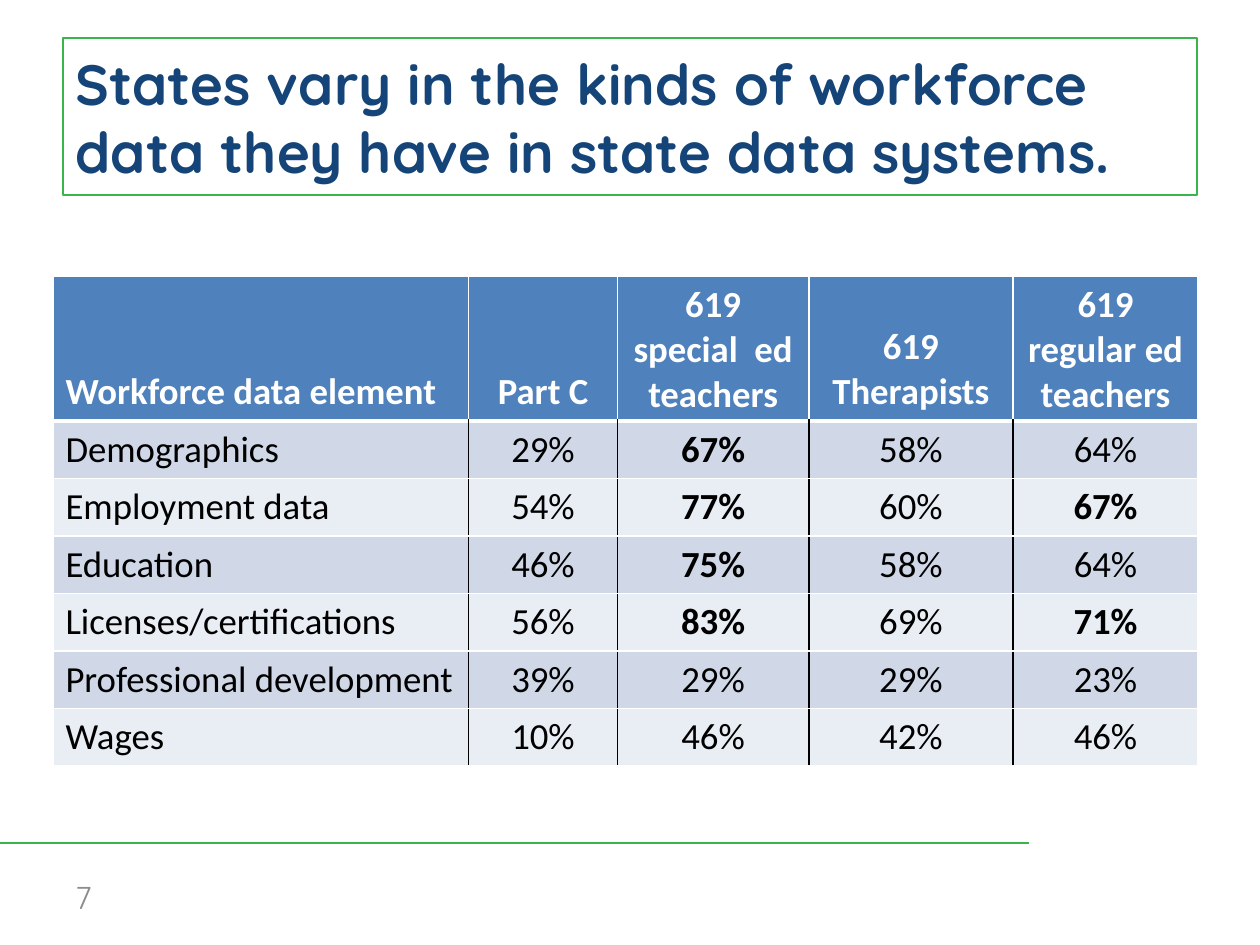
from dataclasses import dataclass

from lxml import etree
from pptx import Presentation
from pptx.dml.color import RGBColor
from pptx.enum.shapes import MSO_CONNECTOR
from pptx.enum.text import MSO_ANCHOR, MSO_AUTO_SIZE, PP_ALIGN
from pptx.oxml.ns import qn
from pptx.util import Inches, Pt

STRAIGHT = MSO_CONNECTOR.STRAIGHT
TOP, MIDDLE, BOTTOM = MSO_ANCHOR.TOP, MSO_ANCHOR.MIDDLE, MSO_ANCHOR.BOTTOM
LEFT, CENTER = PP_ALIGN.LEFT, PP_ALIGN.CENTER
NO_AUTOFIT = MSO_AUTO_SIZE.NONE
TITLE_ONLY = 5


@dataclass(frozen=True)
class Theme:
    green: str = "39B54A"
    navy: str = "154578"
    gray: str = "8C8C8C"
    white: str = "FFFFFF"
    black: str = "000000"
    header: str = "4F81BD"
    bands: tuple = ("D0D8E8", "E9EDF4")
    display_font: str = "Quicksand"
    table_font: str = "Calibri"
    title_size: float = 32.4
    table_size: float = 21
    number_size: float = 18


THEME = Theme()

HEADINGS = ["Workforce data element", "Part C", "619 special  ed teachers",
            "619 Therapists", "619 regular ed teachers"]
SHARES = [
    ("Demographics", 29, 67, 58, 64),
    ("Employment data", 54, 77, 60, 67),
    ("Education", 46, 75, 58, 64),
    ("Licenses/certifications", 56, 83, 69, 71),
    ("Professional development", 39, 29, 29, 23),
    ("Wages", 10, 46, 42, 46),
]
HIGH_SHARE = 67  # shares from here up are bold, except in the therapists column
THERAPISTS = 3
COLUMN_WIDTHS = [3.3, 1.18, 1.52, 1.62, 1.47]
HEADER_HEIGHT, ROW_HEIGHT = 1.15, 0.457
MARGIN, CONTENT_WIDTH = 0.5, 9


def add_text(frame, text, font, size, color, bold=False, align=LEFT):
    paragraph = frame.paragraphs[0]
    paragraph.alignment = align
    run = paragraph.add_run()
    run.text = text
    run.font.name = font
    run.font.size = Pt(size)
    run.font.bold = bold
    run.font.color.rgb = RGBColor.from_string(color)


def set_borders(cell, **sides):
    """Draw cell edges; each side (L, R, T, B) is a colour and a width in points."""
    properties = cell._tc.get_or_add_tcPr()
    for side in "LRTB":
        color, width = sides[side]
        edge = etree.SubElement(properties, qn(f"a:ln{side}"), w=str(Pt(width)))
        fill = etree.SubElement(edge, qn("a:solidFill"))
        etree.SubElement(fill, qn("a:srgbClr"), val=color)


presentation = Presentation()
presentation.slide_width, presentation.slide_height = Inches(10), Inches(7.5)
slide = presentation.slides.add_slide(presentation.slide_layouts[TITLE_ONLY])

# Footer rule and slide number
rule_y = Inches(6.69)
rule = slide.shapes.add_connector(STRAIGHT, 0, rule_y, Inches(8.17), rule_y)
rule.line.color.rgb = RGBColor.from_string(THEME.green)
rule.line.width = Pt(1.5)
etree.SubElement(rule._element.spPr, qn("a:effectLst"))

number = slide.shapes.add_textbox(Inches(MARGIN), Inches(6.92), Inches(2.33), Inches(0.4))
number.text_frame.word_wrap = True
number.text_frame.vertical_anchor = MIDDLE
add_text(number.text_frame, "7", THEME.display_font, THEME.number_size, THEME.gray)

# Framed title
title = slide.shapes.title
title.left, title.top = Inches(MARGIN), Inches(0.3)
title.width, title.height = Inches(CONTENT_WIDTH), Inches(1.25)
title.line.color.rgb = RGBColor.from_string(THEME.green)
title.line.width = Pt(1)
title.text_frame.word_wrap = True
title.text_frame.auto_size = NO_AUTOFIT
title.text_frame.vertical_anchor = MIDDLE
add_text(title.text_frame,
         "States vary in the kinds of workforce data they have in state data systems.",
         THEME.display_font, THEME.title_size, THEME.navy, bold=True)

# Workforce table
rows = [HEADINGS] + [[name] + [f"{share}%" for share in shares] for name, *shares in SHARES]
table_height = HEADER_HEIGHT + ROW_HEIGHT * len(SHARES)
table = slide.shapes.add_table(len(rows), len(HEADINGS), Inches(0.42), Inches(2.19),
                               Inches(sum(COLUMN_WIDTHS)), Inches(table_height)).table
table.horz_banding = False
for column, width in zip(table.columns, COLUMN_WIDTHS):
    column.width = Inches(width)

last_column = len(HEADINGS) - 1
for r, texts in enumerate(rows):
    is_header = r == 0
    table.rows[r].height = Inches(HEADER_HEIGHT if is_header else ROW_HEIGHT)
    divider = THEME.white if is_header else THEME.black
    for c, text in enumerate(texts):
        cell = table.cell(r, c)
        set_borders(cell,
                    L=(THEME.white if c == 0 else divider, 1),
                    R=(THEME.white if c == last_column else divider, 1),
                    T=(THEME.white, 3 if r == 1 else 1),
                    B=(THEME.white, 3 if is_header else 1))
        cell.fill.solid()
        cell.fill.fore_color.rgb = RGBColor.from_string(
            THEME.header if is_header else THEME.bands[(r - 1) % 2])
        cell.vertical_anchor = BOTTOM if is_header else TOP
        is_high = (not is_header and c not in (0, THERAPISTS)
                   and SHARES[r - 1][c] >= HIGH_SHARE)
        add_text(cell.text_frame, text, THEME.table_font, THEME.table_size,
                 THEME.white if is_header else THEME.black,
                 bold=is_header or is_high, align=LEFT if c == 0 else CENTER)

presentation.save("out.pptx")
